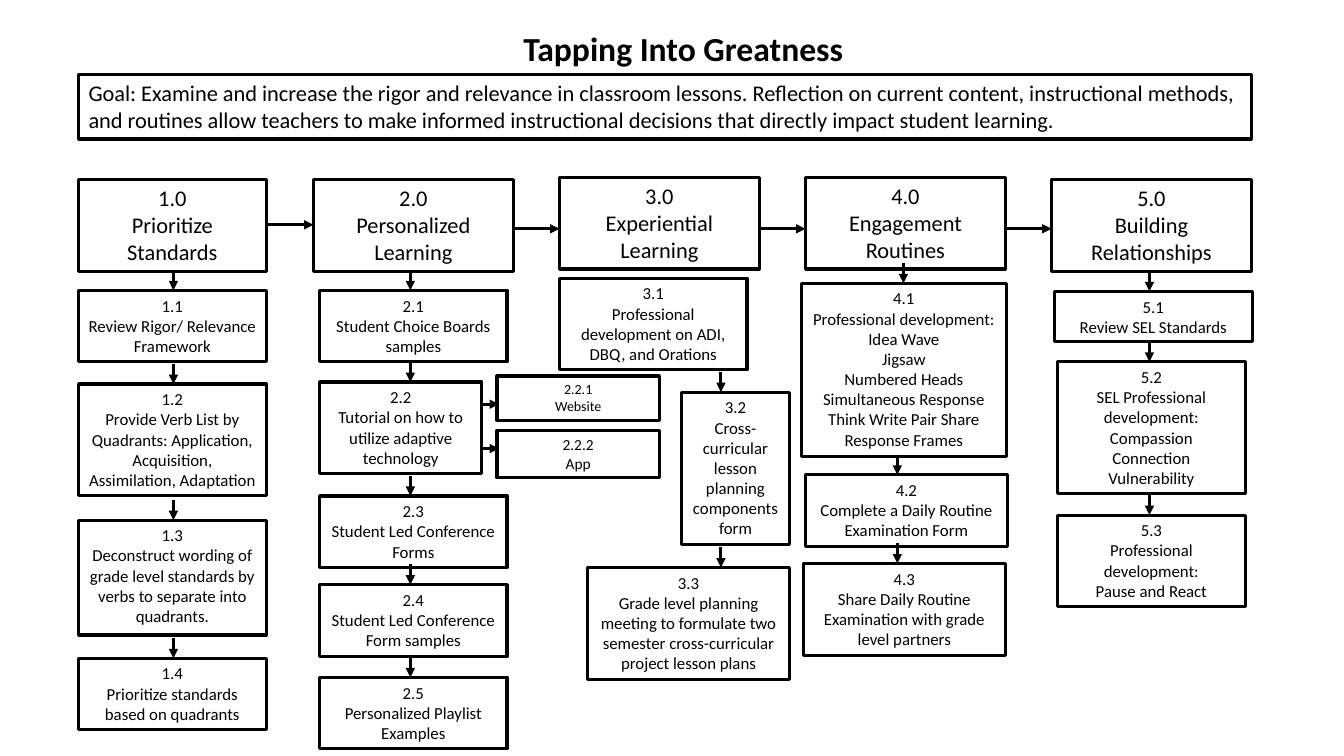
from dataclasses import dataclass
from itertools import pairwise

from lxml.etree import SubElement
from pptx import Presentation
from pptx.dml.color import RGBColor
from pptx.enum.shapes import MSO_CONNECTOR as Link, MSO_SHAPE as Form
from pptx.enum.text import MSO_ANCHOR as Anchor, MSO_AUTO_SIZE as Fit, PP_ALIGN as Align
from pptx.oxml.ns import qn
from pptx.util import Inches, Pt


@dataclass(frozen=True)
class Theme:
    ink: RGBColor = RGBColor(0, 0, 0)
    font: str = "Calibri"
    title: float = 24
    head: float = 16
    step: float = 12
    line: float = 2.25


@dataclass(frozen=True)
class Box:
    x: float
    y: float
    w: float
    h: float

    def shift(self, base):
        return Box(base.x + self.x, base.y + self.y, self.w, self.h)

    def spread(self):
        return [Inches(n) for n in (self.x, self.y, self.w, self.h)]


@dataclass(frozen=True)
class Step:
    """A box and its arrow, both measured from the top left of the column."""
    box: Box
    text: str
    axis: float | None = None


@dataclass(frozen=True)
class Branch:
    box: Box
    text: str
    size: float
    level: float


THEME = Theme()
ARROW = 0.2
GOAL = ("Goal: Examine and increase the rigor and relevance in classroom lessons. "
        "Reflection on current content, instructional methods, and routines allow "
        "teachers to make informed instructional decisions that directly impact "
        "student learning.")

COLUMNS = [
    (Box(0.78, 1.78, 1.86, 0.91), "1.0\nPrioritize Standards", [
        Step(Box(0, 1.1, 1.86, 0.71), "1.1\nReview Rigor/ Relevance Framework", 0.94),
        Step(Box(0, 2.03, 1.86, 1.11), "1.2\nProvide Verb List by Quadrants: Application, "
             "Acquisition, Assimilation, Adaptation", 0.94),
        Step(Box(0, 3.38, 1.86, 1.14), "1.3\nDeconstruct wording of grade level standards "
             "by verbs to separate into quadrants.", 0.94),
        Step(Box(0, 4.75, 1.86, 0.71), "1.4\nPrioritize standards based on quadrants", 0.94),
    ]),
    (Box(3.11, 1.78, 1.98, 0.91), "2.0\nPersonalized Learning", [
        Step(Box(0.06, 1.1, 1.86, 0.71), "2.1\nStudent Choice Boards samples", 0.96),
        Step(Box(0.06, 2.01, 1.61, 0.91),
             "2.2\nTutorial on how to utilize adaptive technology", 0.96),
        Step(Box(0.06, 3.14, 1.86, 0.71), "2.3\nStudent Led Conference Forms", 0.96),
        Step(Box(0.06, 4.02, 1.86, 0.71), "2.4\nStudent Led Conference Form samples", 0.96),
        Step(Box(0.06, 4.94, 1.86, 0.71), "2.5\nPersonalized Playlist Examples", 0.96),
    ]),
    (Box(5.55, 1.76, 1.98, 0.91), "3.0\nExperiential Learning", [
        Step(Box(0, 1, 1.86, 0.91), "3.1\nProfessional development on ADI, DBQ, and Orations"),
        Step(Box(1.21, 2.13, 1.07, 1.51),
             "3.2\nCross-curricular lesson planning components form", 1.6),
        Step(Box(0.28, 3.87, 2, 1.11), "3.3\nGrade level planning meeting to formulate two "
             "semester cross-curricular project lesson plans", 1.6),
    ]),
    (Box(7.99, 1.76, 1.98, 0.91), "4.0\nEngagement Routines", [
        Step(Box(-0.04, 1.05, 2.03, 1.72), "4.1\nProfessional development:\nIdea Wave\nJigsaw\n"
             "Numbered Heads\nSimultaneous Response\nThink Write Pair Share\nResponse Frames",
             0.97),
        Step(Box(0, 2.95, 2, 0.71), "4.2\nComplete a Daily Routine Examination Form", 0.91),
        Step(Box(-0.02, 3.83, 2, 0.91),
             "4.3\nShare Daily Routine Examination with grade level partners", 0.91),
    ]),
    (Box(10.43, 1.78, 1.98, 0.91), "5.0\nBuilding Relationships", [
        Step(Box(0.03, 1.11, 1.96, 0.5), "5.1\nReview SEL Standards", 0.97),
        Step(Box(0.06, 1.81, 1.86, 1.31), "5.2\nSEL Professional development:\n"
             "Compassion\nConnection\nVulnerability", 0.97),
        Step(Box(0.06, 3.33, 1.86, 0.91),
             "5.3\nProfessional development:\nPause and React", 0.97),
    ]),
]

TOOLS = [
    Branch(Box(1.76, -0.06, 1.61, 0.44), "2.2.1\nWebsite", 10, 0.22),
    Branch(Box(1.76, 0.48, 1.61, 0.47), "2.2.2\nApp", 11, 0.66),
]


def write(frame, text, size, align, bold=False):
    for i, line in enumerate(text.split("\n")):
        para = frame.paragraphs[0] if i == 0 else frame.add_paragraph()
        para.alignment = align
        run = para.add_run()
        run.text = line
        font = run.font
        font.name, font.size, font.bold = THEME.font, Pt(size), bold
        font.color.rgb = THEME.ink


def panel(slide, box, text, size, align=Align.CENTER):
    shape = slide.shapes.add_shape(Form.RECTANGLE, *box.spread())
    shape.shadow.inherit = False
    shape.fill.background()
    shape.line.color.rgb = THEME.ink
    shape.line.width = Pt(THEME.line)
    frame = shape.text_frame
    frame.word_wrap = True
    frame.auto_size = Fit.SHAPE_TO_FIT_TEXT
    frame.vertical_anchor = Anchor.TOP
    write(frame, text, size, align)


def arrow(slide, *ends):
    link = slide.shapes.add_connector(Link.STRAIGHT, *[Inches(n) for n in ends])
    link.line.color.rgb = THEME.ink
    link.line.width = Pt(THEME.line)
    SubElement(link.line._get_or_add_ln(), qn("a:tailEnd"), type="triangle")
    SubElement(link._element.spPr, qn("a:effectLst"))


def banner(slide, box):
    """Place the title above the goal panel."""
    title = slide.shapes.title
    spot = Box(4.31, 0, 3.41, 0.5).shift(box)
    title.left, title.top, title.width, title.height = spot.spread()
    frame = title.text_frame
    frame.word_wrap = False
    frame.auto_size = Fit.SHAPE_TO_FIT_TEXT
    frame.vertical_anchor = Anchor.TOP
    write(frame, "Tapping Into Greatness", THEME.title, Align.LEFT, True)
    title.text_frame.paragraphs[0].line_spacing = 1.0
    goal = Box(0, 0.51, box.w, box.h - 0.51).shift(box)
    panel(slide, goal, GOAL, THEME.head, Align.LEFT)


def column(slide, box, head, steps):
    panel(slide, box, head, THEME.head)
    for step in steps:
        spot = step.box.shift(box)
        panel(slide, spot, step.text, THEME.step)
        if step.axis is not None:
            x = box.x + step.axis
            arrow(slide, x, spot.y - ARROW, x, spot.y)


def fork(slide, box):
    """Branch the tools off the right side of a step."""
    for tool in TOOLS:
        spot = tool.box.shift(box)
        panel(slide, spot, tool.text, tool.size)
        y = box.y + tool.level
        arrow(slide, box.x + box.w, y, spot.x + 0.02, y)


def main():
    deck = Presentation()
    deck.slide_width, deck.slide_height = Inches(13.33), Inches(7.5)
    slide = deck.slides.add_slide(deck.slide_layouts[5])
    banner(slide, Box(0.78, 0.23, 11.63, 1.15))
    for box, head, steps in COLUMNS:
        column(slide, box, head, steps)
    base, _, steps = COLUMNS[1]
    fork(slide, steps[1].box.shift(base))
    for (left, *_), (right, *_) in pairwise(COLUMNS):
        y = 2.23 if left is COLUMNS[0][0] else 2.27
        arrow(slide, left.x + left.w, y, right.x, y)
    deck.save("out.pptx")


if __name__ == "__main__":
    main()
